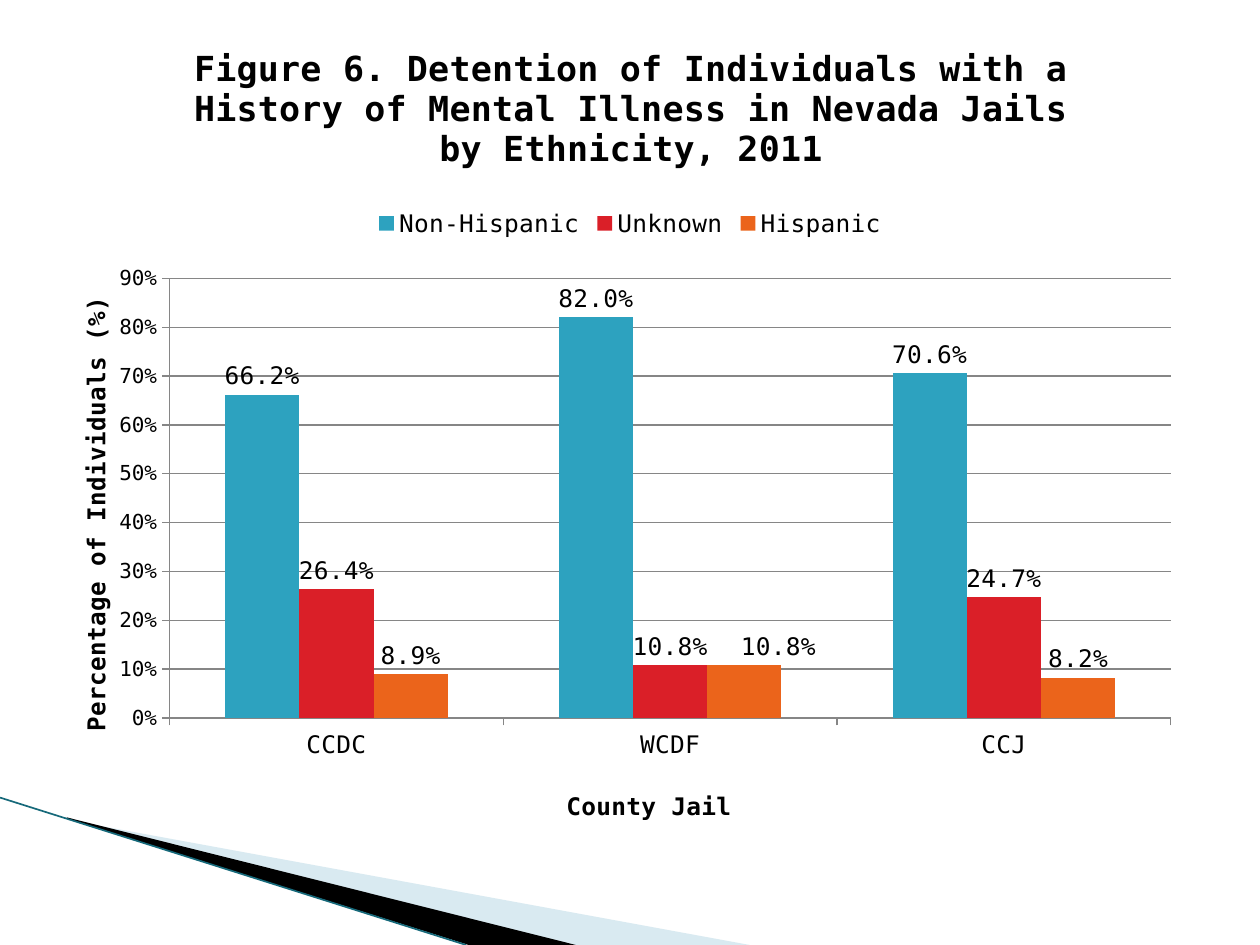
from pptx import Presentation
from pptx.chart.data import CategoryChartData
from pptx.dml.color import RGBColor as RGB
from pptx.enum.chart import XL_CHART_TYPE as ChartType, XL_LABEL_POSITION as LabelPos
from pptx.enum.chart import XL_LEGEND_POSITION as LegendPos, XL_TICK_MARK as Tick
from pptx.enum.shapes import MSO_CONNECTOR as Connector
from pptx.oxml import parse_xml
from pptx.oxml.ns import nsdecls, qn
from pptx.oxml.xmlchemy import OxmlElement
from pptx.util import Inches, Pt

THEME = {
    "font": "DejaVu Sans Mono",
    "text": RGB.from_string("000000"),
    "rule": RGB.from_string("868686"),
    "pale": RGB.from_string("A0CBDC"),
    "edge": RGB.from_string("16697A"),
    "bars": [RGB.from_string(c) for c in ("2DA2BF", "DA1F28", "EB641B")],
    "title": Pt(20),
    "label": Pt(14),
    "tick": Pt(12),
}


def write_text(frame, text, size, bold=True):
    frame.text = text
    font = frame.paragraphs[0].runs[0].font
    font.name, font.size, font.bold = THEME["font"], size, bold
    font.color.rgb = THEME["text"]


def place(parent, index, inner=False, **shares):
    old = parent.find(qn("c:layout"))
    if old is not None:
        parent.remove(old)
    target = '<c:layoutTarget val="inner"/>' if inner else ""
    modes = "".join(f'<c:{k}Mode val="edge"/>' for k in shares if k in "xy" and parent.tag != qn("c:dLbl"))
    values = "".join(f'<c:{k} val="{v}"/>' for k, v in shares.items())
    parent.insert(index, parse_xml(
        f'<c:layout {nsdecls("c")}><c:manualLayout>{target}{modes}{values}</c:manualLayout></c:layout>'))


deck = Presentation()
deck.slide_width, deck.slide_height = Inches(10), Inches(7.5)
W, H = deck.slide_width, deck.slide_height
slide = deck.slides.add_slide(deck.slide_layouts[6])
shapes = slide.shapes

wedges = [
    ([(55, 868), (595, 1000), (456, 1000), (55, 867)], THEME["pale"], 40),
    ([(53, 865), (457, 1000), (372, 1000), (54, 867)], THEME["text"], 100),
]
for corners, color, opacity in wedges:
    outline = shapes.build_freeform(*corners[0], scale=(W / 1000, H / 1000))
    outline.add_line_segments(corners[1:], close=True)
    wedge = outline.convert_to_shape()
    wedge.shadow.inherit = False
    wedge.fill.solid()
    wedge.fill.fore_color.rgb = color
    wedge.line.fill.background()
    alpha = OxmlElement("a:alpha")
    alpha.set("val", str(opacity * 1000))
    wedge.fill._xPr.find(qn("a:solidFill"))[0].append(alpha)

edge = shapes.add_connector(Connector.STRAIGHT, 0, int(0.844 * H), int(0.37 * W), H)
edge.line.color.rgb = THEME["edge"]
edge.line.width = Pt(0.95)
edge._element.spPr.append(OxmlElement("a:effectLst"))

jail_data = CategoryChartData(number_format="0.0%")
jail_data.categories = ["CCDC", "WCDF", "CCJ"]
jail_data.add_series("Non-Hispanic", (0.662, 0.82, 0.706))
jail_data.add_series("Unknown", (0.264, 0.108, 0.247))
jail_data.add_series("Hispanic", (0.089, 0.108, 0.082))
chart = shapes.add_chart(ChartType.COLUMN_CLUSTERED, int(0.05 * W), int(0.033 * H),
                         int(0.9 * W), int(0.843 * H), jail_data).chart
chart.font.name, chart.font.size = THEME["font"], THEME["label"]
chart.font.color.rgb = THEME["text"]

write_text(chart.chart_title.text_frame,
           "Figure 6. Detention of Individuals with a History of Mental Illness "
           "in Nevada Jails by Ethnicity, 2011", size=THEME["title"])
place(chart.chart_title._element, 1, x=0.11, y=0.01)

chart.has_legend = True
legend = chart.legend
legend.position = LegendPos.TOP
legend.include_in_layout = False
legend.font.name, legend.font.size = THEME["font"], THEME["label"]
legend.font.color.rgb = THEME["text"]
place(legend._element, 1, x=0.27, y=0.22, w=0.46, h=0.05)

jails, shares = chart.category_axis, chart.value_axis
for axis, caption, size, spot in (
    (jails, "County Jail", THEME["label"], {"x": 0.44, "y": 0.96}),
    (shares, "Percentage of Individuals (%)", THEME["tick"], {"x": 0.01, "y": 0.34}),
):
    write_text(axis.axis_title.text_frame, caption, size=THEME["label"])
    place(axis.axis_title._element, 1, **spot)
    axis.major_tick_mark, axis.minor_tick_mark = Tick.OUTSIDE, Tick.NONE
    axis.format.line.color.rgb = THEME["rule"]
    axis.tick_labels.font.name, axis.tick_labels.font.size = THEME["font"], size
    axis.tick_labels.font.color.rgb = THEME["text"]
shares.minimum_scale, shares.maximum_scale, shares.major_unit = 0, 0.9, 0.1
shares.tick_labels.number_format = "0%"
shares.tick_labels.number_format_is_linked = False
shares.major_gridlines.format.line.color.rgb = THEME["rule"]

columns = chart.plots[0]
columns.gap_width, columns.overlap = 150, 0
columns.vary_by_categories = False
for group, color in zip(columns.series, THEME["bars"]):
    group.format.fill.solid()
    group.format.fill.fore_color.rgb = color
    labels = group.data_labels
    labels.show_value = True
    labels.number_format, labels.number_format_is_linked = "0.0%", False
    labels.position = LabelPos.OUTSIDE_END
    labels.font.name, labels.font.size = THEME["font"], THEME["label"]
    labels.font.color.rgb = THEME["text"]

shifted = columns.series[2].points[1].data_label
shifted.font.name, shifted.font.size = THEME["font"], THEME["label"]
shifted.font.color.rgb = THEME["text"]
shifted.position = LabelPos.OUTSIDE_END
place(columns.series[2]._element.find(f".//{qn('c:dLbl')}"), 1, x=0.03, y=0)
place(chart._chartSpace.find(f".//{qn('c:plotArea')}"), 0, inner=True,
      x=0.094, y=0.315, w=0.883, h=0.56)

deck.save("out.pptx")
